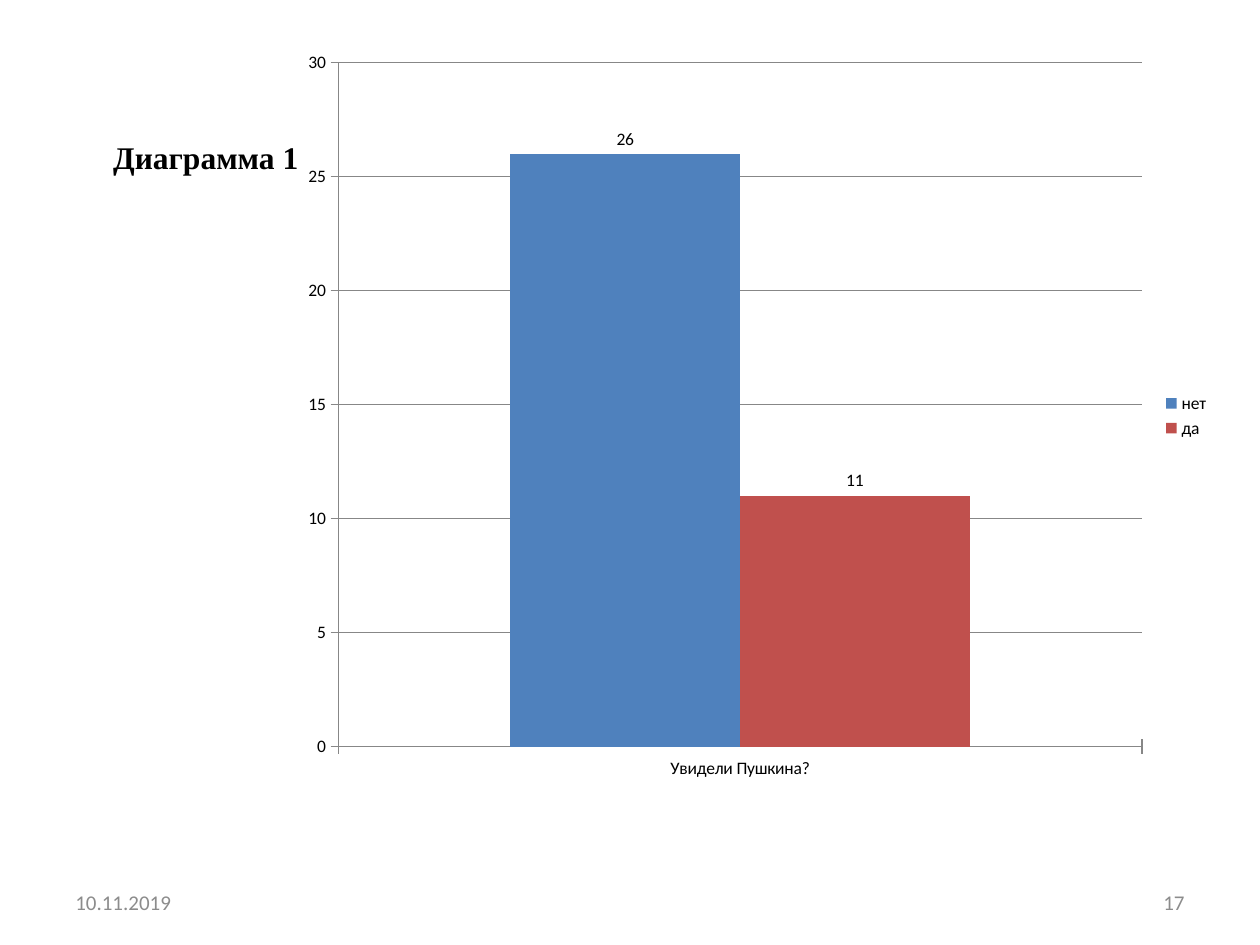
"""Build a slide with a clustered column chart, its title, a date and a number."""
from pptx import Presentation
from pptx.chart.data import CategoryChartData as Data
from pptx.dml.color import RGBColor as Rgb
from pptx.enum.chart import XL_CHART_TYPE as Kind, XL_LABEL_POSITION as Spot
from pptx.enum.chart import XL_LEGEND_POSITION as Side, XL_TICK_MARK as Tick
from pptx.enum.text import MSO_ANCHOR as Anchor, MSO_AUTO_SIZE as Fit, PP_ALIGN as Align
from pptx.util import Inches, Pt

WIDE, HIGH = 10, 7.5
HEX = {"ink": "000000", "gray": "8C8C8C", "line": "878787", "no": "4F81BD", "yes": "C0504D"}
SANS, SERIF = "Calibri", "Times New Roman"

MARGIN, FOOT = 0.05, (0.93, 0.23, 0.05)
TOP, SPAN, ROW = FOOT
SMALL = {"name": SANS, "size": Pt(12)}
HEAD = {"name": SERIF, "size": Pt(18), "bold": True}
MID = {"vertical_anchor": Anchor.MIDDLE, "word_wrap": True}
FREE = {"word_wrap": False, "auto_size": Fit.SHAPE_TO_FIT_TEXT}
TEXTS = [
    ("10.11.2019", (MARGIN, TOP, SPAN, ROW), SMALL, "gray", MID, Align.LEFT),
    ("17", (1 - MARGIN - SPAN, TOP, SPAN, ROW), SMALL, "gray", MID, Align.RIGHT),
    ("Диаграмма 1", (0.08, 0.14, 0.17, 0.07), HEAD, "ink", FREE, Align.LEFT),
]
PLOT = (0.23, 0.04, 0.74, 0.8)
CATS = ["Увидели Пушкина?"]
ROWS = [("нет", [26], "no"), ("да", [11], "yes")]


def place(box):
    x, y, w, h = box
    return Inches(x * WIDE), Inches(y * HIGH), Inches(w * WIDE), Inches(h * HIGH)


def tint(name):
    return Rgb.from_string(HEX[name])


def put(obj, vals):
    for key, val in vals.items():
        setattr(obj, key, val)


def draw_chart(slide):
    data = Data()
    data.categories = CATS
    for name, vals, _ in ROWS:
        data.add_series(name, vals)
    chart = slide.shapes.add_chart(Kind.COLUMN_CLUSTERED, *place(PLOT), data).chart
    put(chart, {"has_title": False, "has_legend": True})
    put(chart.font, {"name": SANS, "size": Pt(10)})
    chart.font.color.rgb = tint("ink")
    put(chart.legend, {"position": Side.RIGHT, "include_in_layout": False})
    axes = chart.category_axis, chart.value_axis
    for axis, grid in zip(axes, (False, True)):
        put(axis, {"has_major_gridlines": grid, "major_tick_mark": Tick.CROSS,
                   "minor_tick_mark": Tick.NONE})
        axis.format.line.color.rgb = tint("line")
    axes[1].major_gridlines.format.line.color.rgb = tint("line")
    plot = chart.plots[0]
    put(plot, {"gap_width": 150, "overlap": 0, "vary_by_categories": False})
    for bars, (_, _, color) in zip(plot.series, ROWS):
        bars.format.fill.solid()
        bars.format.fill.fore_color.rgb = tint(color)
        put(bars.data_labels, {"show_value": True, "position": Spot.OUTSIDE_END})


def draw_text(slide, text, box, font, color, frame, align):
    body = slide.shapes.add_textbox(*place(box)).text_frame
    put(body, frame)
    para = body.paragraphs[0]
    para.alignment = align
    run = para.add_run()
    run.text = text
    put(run.font, font)
    run.font.color.rgb = tint(color)


def main():
    deck = Presentation()
    put(deck, {"slide_width": Inches(WIDE), "slide_height": Inches(HIGH)})
    slide = deck.slides.add_slide(deck.slide_layouts[6])
    draw_chart(slide)
    for item in TEXTS:
        draw_text(slide, *item)
    deck.save("out.pptx")


if __name__ == "__main__":
    main()
